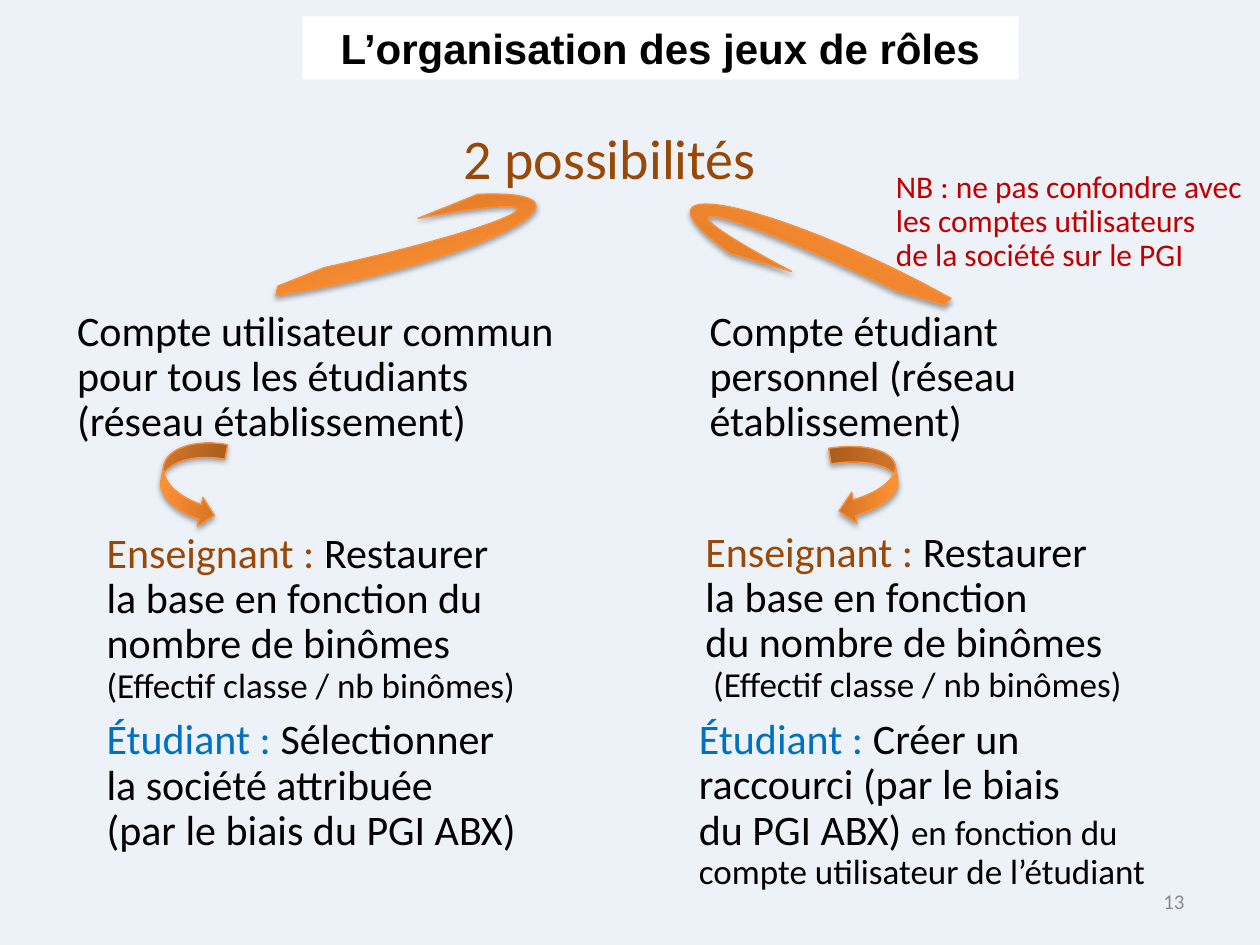
import pptx
import pptx.dml.color
import pptx.enum.shapes
import pptx.enum.text
import pptx.oxml
import pptx.oxml.ns
import pptx.util

Cm, Pt = pptx.util.Cm, pptx.util.Pt
RGB = pptx.dml.color.RGBColor
SHAPE = pptx.enum.shapes.MSO_SHAPE
ALIGN = pptx.enum.text.PP_ALIGN
ANCHOR = pptx.enum.text.MSO_ANCHOR
AUTO = pptx.enum.text.MSO_AUTO_SIZE

PALE = RGB(0xED, 0xF2, 0xF8)
WHITE = RGB(0xFF, 0xFF, 0xFF)
BLACK = RGB(0, 0, 0)
GREY = RGB(0x8C, 0x8C, 0x8C)
BROWN = RGB(0x98, 0x48, 0x07)
BLUE = RGB(0x00, 0x70, 0xC0)
RED = RGB(0xC0, 0, 0)
DARK = RGB(0xCC, 0x6E, 0x20)
LIGHT = RGB(0xFF, 0x90, 0x34)
EDGE = RGB(0xF6, 0x92, 0x40)

SHADOW = (
    '<a:outerShdw %s blurRad="40000" dist="23000" dir="5400000" rotWithShape="0">'
    '<a:srgbClr val="000000"><a:alpha val="35000"/></a:srgbClr></a:outerShdw>'
    % pptx.oxml.ns.nsdecls("a")
)
LOOP = (0.5, 4.597, 201.024, 102.547, 0.142)


class Deck:
    frame = {"word_wrap": True, "auto_size": AUTO.NONE}
    para = {"line_spacing": 0.9, "space_before": Pt(0), "alignment": ALIGN.LEFT}
    font = {"name": "Calibri", "bold": False}

    def __init__(self):
        self.prs = pptx.Presentation()
        self.prs.slide_width, self.prs.slide_height = Cm(25.4), Cm(19.05)
        self.slide = self.prs.slides.add_slide(self.prs.slide_layouts[3])
        fill = self.slide.background.fill
        fill.solid()
        fill.fore_color.rgb = PALE

    def apply(self, item, base, **more):
        for key, value in {**base, **more}.items():
            setattr(item, key, value)

    def fill_text(self, box, runs, anchor=ANCHOR.TOP, font=None, **para):
        """Fill a box with runs of (text, size, colour); a newline is a line break."""
        self.apply(box.text_frame, self.frame, vertical_anchor=anchor)
        par = box.text_frame.paragraphs[0]
        self.apply(par, self.para, **para)
        for text, size, color in runs:
            for row, line in enumerate(text.split("\n")):
                if row:
                    par.add_line_break()
                if line:
                    run = par.add_run()
                    run.text = line
                    self.apply(run.font, self.font, size=Pt(size), **(font or {}))
                    run.font.color.rgb = color

    def place(self, box, at):
        names = ("left", "top", "width", "height")
        self.apply(box, dict(zip(names, map(Cm, at))))

    def title(self, text, at):
        box = self.slide.shapes.title
        self.place(box, at)
        box.fill.solid()
        box.fill.fore_color.rgb = WHITE
        self.fill_text(box, [(text, 24, BLACK)], ANCHOR.MIDDLE,
                       {"name": "Arial", "bold": True},
                       alignment=ALIGN.CENTER, line_spacing=1.0)

    def body(self, idx, text, at):
        box = self.slide.placeholders[idx]
        self.place(box, at)
        props = box.text_frame.paragraphs[0]._p.get_or_add_pPr()
        props.set("marL", "0")
        props.set("indent", "0")
        props.append(pptx.oxml.parse_xml("<a:buNone %s/>" % pptx.oxml.ns.nsdecls("a")))
        self.fill_text(box, [(text, 24, BLACK)])

    def text(self, runs, at, anchor=ANCHOR.TOP, **para):
        box = self.slide.shapes.add_textbox(*map(Cm, at))
        self.fill_text(box, runs, anchor, **para)

    def arrow(self, kind, at, turn, adj=(), flip=False):
        shape = self.slide.shapes.add_shape(kind, *map(Cm, at))
        shape.rotation = turn
        for num, value in enumerate(adj):
            shape.adjustments[num] = value
        if flip:
            shape._element.spPr.xfrm.set("flipV", "1")
        shape.fill.gradient()
        shape.fill.gradient_angle = 90
        stops = zip(shape.fill.gradient_stops, (0, 0.8), (DARK, LIGHT))
        for stop, pos, color in stops:
            stop.position = pos
            stop.color.rgb = color
        shape.line.color.rgb = EDGE
        shape.line.width = Pt(0.75)
        shape.shadow.inherit = False
        glow = shape._element.spPr.find(pptx.oxml.ns.qn("a:effectLst"))
        glow.append(pptx.oxml.parse_xml(SHADOW))


def main():
    deck = Deck()
    deck.title("L’organisation des jeux de rôles", (6.1, 0.33, 14.43, 1.27))
    deck.body(1, "Compte utilisateur commun pour tous les étudiants "
                 "(réseau établissement)", (1.3, 6.12, 11, 1.96))
    deck.body(2, "Compte étudiant personnel (réseau établissement)",
              (14.05, 6.12, 9.04, 1.96))
    deck.text([("13", 12, GREY)], (18.21, 17.65, 5.92, 1.02), ANCHOR.MIDDLE,
              alignment=ALIGN.RIGHT, line_spacing=1.0)
    deck.text([("2 possibilités", 32, BROWN)], (9.09, 2.51, 7.19, 1.52))

    deck.arrow(SHAPE.CIRCULAR_ARROW, (2.9, 4.34, 8, 1.35), 167.2, LOOP)
    deck.arrow(SHAPE.CIRCULAR_ARROW, (13.54, 5.26, 8, 1.35), 25.4, LOOP)
    deck.arrow(SHAPE.CURVED_DOWN_ARROW, (2.97, 9.12, 1.75, 1.19), 100.5, flip=True)
    deck.arrow(SHAPE.CURVED_DOWN_ARROW, (16.66, 9.09, 1.6, 1.27), 80.6)

    teach, learn = ("Enseignant : ", 24, BROWN), ("Étudiant : ", 24, BLUE)
    count = "(Effectif classe / nb binômes)"
    steps = (
        (1.9, 12.95, [teach, ("Restaurer\nla base en fonction du nombre de binômes\n",
                              24, BLACK), (count, 20, BLACK)]),
        (13.97, 12.93, [teach, ("Restaurer\nla base en fonction\ndu nombre de binômes\n",
                                24, BLACK), (" " + count, 20, BLACK)]),
        (1.9, 15.95, [learn, ("Sélectionner\nla société attribuée\n"
                              "(par le biais du PGI ABX)", 24, BLACK)]),
        (13.84, 16.71, [learn, ("Créer un raccourci (par le biais\ndu PGI ABX) ",
                                24, BLACK),
                        ("en fonction du compte utilisateur de l’étudiant",
                         20, BLACK)]),
    )
    for left, top, runs in steps:
        deck.text(runs, (left, top, 9.6, 1.4), ANCHOR.BOTTOM)

    deck.text([("NB : ne pas confondre avec les comptes utilisateurs\n"
                "de la société sur le PGI", 18, RED)], (17.81, 3.33, 7.59, 1.96))
    deck.prs.save("out.pptx")


if __name__ == "__main__":
    main()
